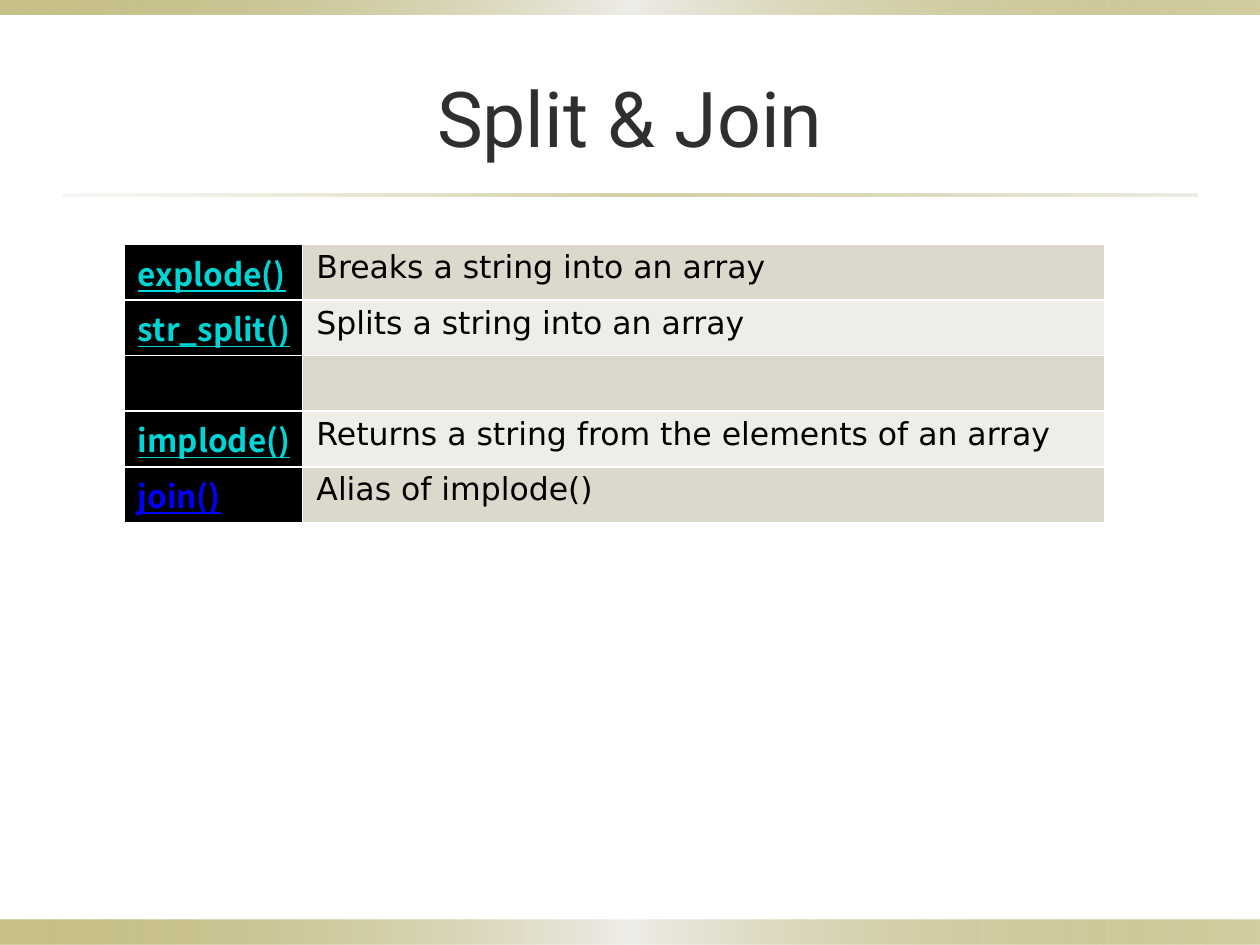
import pptx
import pptx.dml.color
import pptx.enum.shapes
import pptx.enum.text
import pptx.oxml
import pptx.oxml.ns
import pptx.util
from pptx.dml.color import RGBColor
from pptx.util import Cm

OLIVE = RGBColor(0x91, 0x84, 0x15)
SAND = RGBColor(0xDC, 0xD9, 0xCC)
PALE = RGBColor(0xEE, 0xED, 0xE8)
CHARCOAL = RGBColor(0x2F, 0x2F, 0x2F)
TURQUOISE = RGBColor(0x00, 0xD5, 0xD5)
BLUE = RGBColor(0x00, 0x00, 0xFF)
BLACK = RGBColor(0x00, 0x00, 0x00)
WHITE = RGBColor(0xFF, 0xFF, 0xFF)

# Gradient stops: position, colour, opacity (all in percent)
BAND_STOPS = [(0, OLIVE, 50), (50, PALE, 100), (100, OLIVE, 40)]
RULE_STOPS = [(0, SAND, 20), (50, OLIVE, 40), (100, SAND, 50)]

# Function name, its colour, description
FUNCTIONS = [
    ("explode()", TURQUOISE, "Breaks a string into an array"),
    ("str_split()", TURQUOISE, "Splits a string into an array"),
    ("", TURQUOISE, ""),
    ("implode()", TURQUOISE, "Returns a string from the elements of an array"),
    ("join()", BLUE, "Alias of implode()"),
]


def write_text(text_frame, text, *, font, size, color, bold=False,
               underline=False, align=pptx.enum.text.PP_ALIGN.LEFT):
    paragraph = text_frame.paragraphs[0]
    paragraph.alignment = align
    if not text:
        return
    run = paragraph.add_run()
    run.text = text
    run.font.name = font
    run.font.size = pptx.util.Pt(size)
    run.font.color.rgb = color
    run.font.bold = bold
    run.font.underline = underline


class SlideBuilder:
    title_font = "Roboto"
    name_font = "Noto Sans CJK TC"
    body_font = "DejaVu Sans"
    body_size = 18

    def __init__(self, presentation):
        self.slide = presentation.slides.add_slide(presentation.slide_layouts[5])

    def gradient_bar(self, left, top, width, height, stops):
        shape = self.slide.shapes.add_shape(
            pptx.enum.shapes.MSO_SHAPE.RECTANGLE,
            Cm(left), Cm(top), Cm(width), Cm(height))
        shape.shadow.inherit = False
        shape.line.fill.background()
        shape.fill.gradient()
        shape.fill.gradient_angle = 0
        stop_list = shape._element.spPr.find(".//" + pptx.oxml.ns.qn("a:gsLst"))
        stop_list.clear()
        for position, color, opacity in stops:
            stop_list.append(pptx.oxml.parse_xml(
                f'<a:gs {pptx.oxml.ns.nsdecls("a")} pos="{position * 1000}">'
                f'<a:srgbClr val="{color}"><a:alpha val="{opacity * 1000}"/>'
                '</a:srgbClr></a:gs>'))

    def title(self, text, left, top, width, height):
        shape = self.slide.shapes.title
        shape.left, shape.top = Cm(left), Cm(top)
        shape.width, shape.height = Cm(width), Cm(height)
        shape.text_frame.vertical_anchor = pptx.enum.text.MSO_ANCHOR.MIDDLE
        write_text(shape.text_frame, text, font=self.title_font, size=44,
                   color=CHARCOAL, align=pptx.enum.text.PP_ALIGN.CENTER)

    def cell(self, cell, text, fill, **text_format):
        cell.margin_left = Cm(0.28)
        cell.margin_right = cell.margin_top = cell.margin_bottom = Cm(0.1)
        cell.fill.solid()
        cell.fill.fore_color.rgb = fill
        properties = cell._tc.get_or_add_tcPr()
        for index, side in enumerate("LRTB"):
            properties.insert(index, pptx.oxml.parse_xml(
                f'<a:ln{side} {pptx.oxml.ns.nsdecls("a")} w="12700"><a:solidFill>'
                f'<a:srgbClr val="{WHITE}"/></a:solidFill></a:ln{side}>'))
        write_text(cell.text_frame, text, size=self.body_size, **text_format)

    def function_table(self, functions, left, top, column_widths, row_height):
        table = self.slide.shapes.add_table(
            len(functions), len(column_widths), Cm(left), Cm(top),
            Cm(sum(column_widths)), Cm(row_height * len(functions))).table
        table.first_row = table.horz_banding = False
        for column, width in zip(table.columns, column_widths):
            column.width = Cm(width)
        for index, (name, name_color, description) in enumerate(functions):
            table.rows[index].height = Cm(row_height)
            self.cell(table.cell(index, 0), name, BLACK, font=self.name_font,
                      color=name_color, bold=True, underline=True)
            self.cell(table.cell(index, 1), description, PALE if index % 2 else SAND,
                      font=self.body_font, color=BLACK)


def main():
    presentation = pptx.Presentation()
    presentation.slide_width, presentation.slide_height = Cm(25.4), Cm(19.05)
    builder = SlideBuilder(presentation)

    # Bottom and top bands, rule below the title
    builder.gradient_bar(0, 18.55, 25.4, 0.5, BAND_STOPS)
    builder.gradient_bar(0, 0, 25.4, 0.3, BAND_STOPS)
    builder.gradient_bar(1.27, 3.9, 22.86, 0.06, RULE_STOPS)

    # Title and table
    builder.title("Split & Join", 1.27, 0.76, 22.86, 3.18)
    builder.function_table(FUNCTIONS, 2.5, 4.93, [3.6, 16.18], 1.12)

    presentation.save("out.pptx")


if __name__ == "__main__":
    main()
